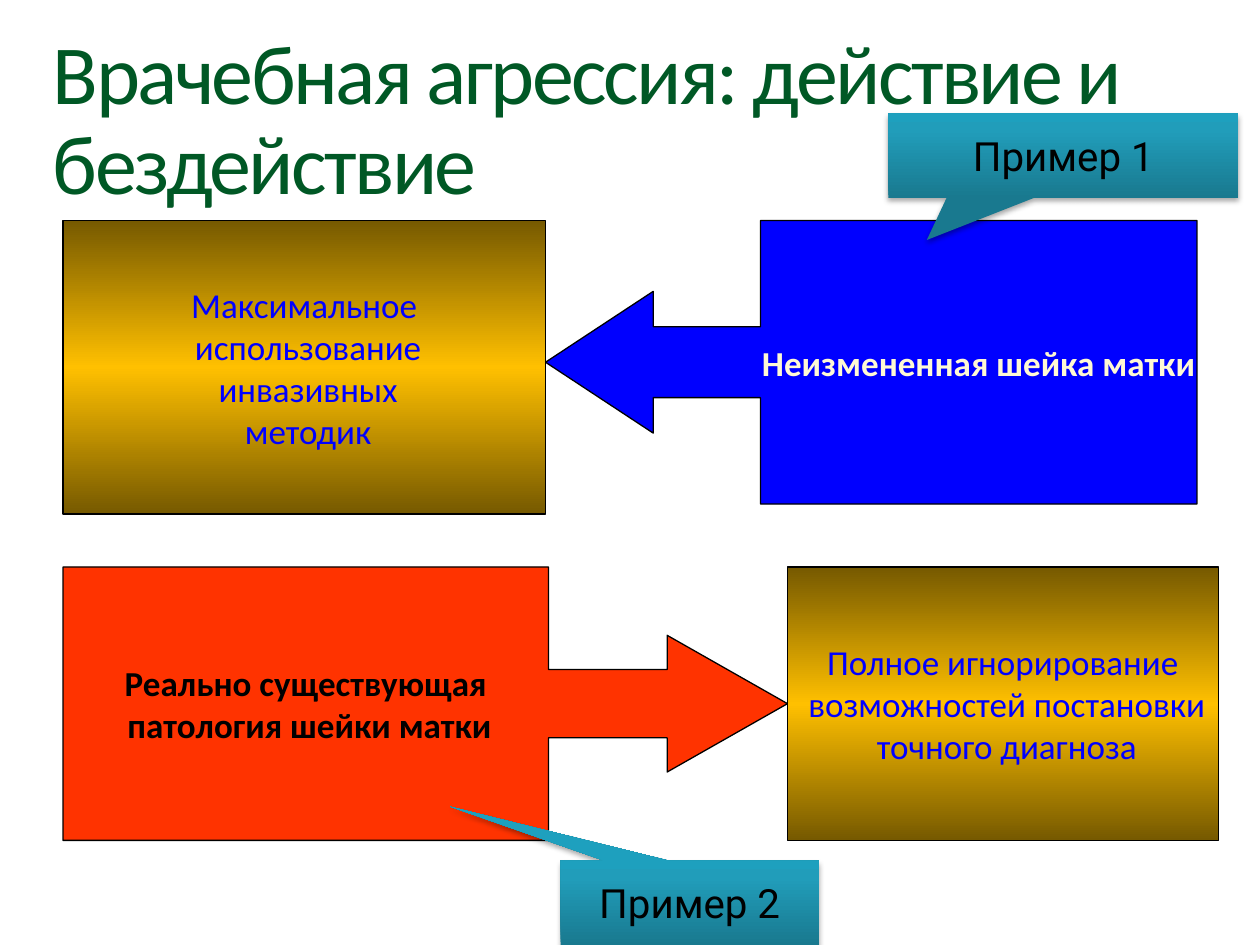
from lxml import etree
from pptx import Presentation
from pptx.dml.color import RGBColor
from pptx.enum.shapes import MSO_SHAPE
from pptx.enum.text import MSO_ANCHOR, MSO_AUTO_SIZE, PP_ALIGN
from pptx.oxml.ns import qn
from pptx.util import Inches, Pt

RECTANGLE = MSO_SHAPE.RECTANGLE
LEFT_ARROW = MSO_SHAPE.LEFT_ARROW_CALLOUT
RIGHT_ARROW = MSO_SHAPE.RIGHT_ARROW_CALLOUT
SPEECH = MSO_SHAPE.RECTANGULAR_CALLOUT
LEFT, CENTER = PP_ALIGN.LEFT, PP_ALIGN.CENTER
TOP, MIDDLE = MSO_ANCHOR.TOP, MSO_ANCHOR.MIDDLE
GROW, FIXED = MSO_AUTO_SIZE.SHAPE_TO_FIT_TEXT, MSO_AUTO_SIZE.NONE

GREEN = RGBColor(0x00, 0x58, 0x25)
BLUE = RGBColor(0x00, 0x00, 0xFF)
RED = RGBColor(0xFF, 0x33, 0x00)
CREAM = RGBColor(0xFF, 0xF9, 0xD4)
BLACK = RGBColor(0x00, 0x00, 0x00)
BRONZE = RGBColor(0x76, 0x59, 0x00)
GOLD = RGBColor(0xFF, 0xC0, 0x00)
DARK_TEAL = RGBColor(0x19, 0x79, 0x8F)
TEAL = RGBColor(0x21, 0x9D, 0xBA)
LIGHT_TEAL = RGBColor(0x1E, 0xA0, 0xBE)

# Gradient stops as (percent, colour)
GOLD_STOPS = [(0, BRONZE), (50, GOLD), (100, BRONZE)]
TEAL_STOPS = [(0, DARK_TEAL), (80, TEAL), (100, LIGHT_TEAL)]


def write_text(shape, lines, *, size=20, font="Calibri", color=BLACK, bold=False,
               align=CENTER, anchor=MIDDLE, wrap=False, inset=None,
               line_spacing=None, tracking=None, auto_size=FIXED):
    frame = shape.text_frame
    frame.word_wrap = wrap
    frame.auto_size = auto_size
    frame.vertical_anchor = anchor
    if inset is not None:
        frame.margin_left = frame.margin_right = Inches(inset)
        frame.margin_top = frame.margin_bottom = Inches(inset)
    for index, line in enumerate(lines):
        para = frame.add_paragraph() if index else frame.paragraphs[0]
        para.alignment = align
        if line_spacing:
            para.line_spacing = line_spacing
        span = para.add_run()
        span.text = line
        span.font.size = Pt(size)
        span.font.name = font
        span.font.bold = bold
        span.font.color.rgb = color
        if tracking:
            span.font._element.set("spc", str(round(tracking * 100)))


def fill_gradient(shape, stops, angle):
    """Fill with any number of stops; the angle runs counter-clockwise."""
    shape.fill.gradient()
    shape.fill.gradient_angle = angle
    stop_list = shape._element.spPr.find(f".//{qn('a:gsLst')}")
    for old_stop in list(stop_list):
        stop_list.remove(old_stop)
    for percent, color in stops:
        stop = etree.SubElement(stop_list, qn("a:gs"), pos=str(percent * 1000))
        etree.SubElement(stop, qn("a:srgbClr"), val=str(color))


def add_soft_shadow(shape):
    effects = shape._element.spPr.find(qn("a:effectLst"))
    shadow = etree.SubElement(effects, qn("a:outerShdw"), blurRad=str(Pt(3.1)),
                              dist=str(Pt(1.8)), dir="5400000", rotWithShape="0")
    color = etree.SubElement(shadow, qn("a:srgbClr"), val=str(BLACK))
    etree.SubElement(color, qn("a:alpha"), val="35000")


def add_block(page, kind, place, adjustments=()):
    shape = page.shapes.add_shape(kind, *map(Inches, place))
    shape.shadow.inherit = False
    for index, value in enumerate(adjustments):
        shape.adjustments[index] = value
    return shape


def outline(shape):
    shape.line.color.rgb = BLACK
    shape.line.width = Pt(0.75)


def add_arrow(page, kind, place, adjustments, fill, lines, color):
    shape = add_block(page, kind, place, adjustments)
    shape.fill.solid()
    shape.fill.fore_color.rgb = fill
    outline(shape)
    write_text(shape, lines, color=color, bold=True)


def add_gold_box(page, place, lines):
    shape = add_block(page, RECTANGLE, place)
    fill_gradient(shape, GOLD_STOPS, 270)
    outline(shape)
    write_text(shape, lines, color=BLUE)


def add_example(page, place, pointer, text):
    shape = add_block(page, SPEECH, place, pointer)
    fill_gradient(shape, TEAL_STOPS, 90)
    shape.line.fill.background()
    add_soft_shadow(shape)
    write_text(shape, [text], size=23, font="Roboto", wrap=True)


def add_title(page, text):
    title = page.shapes.title
    title.left, title.top = Inches(0.42), Inches(0.25)
    title.width, title.height = Inches(9.17), Inches(0.73)
    write_text(title, [text], size=48, color=GREEN, align=LEFT, anchor=TOP, wrap=True,
               inset=0, line_spacing=0.9, tracking=-1.5, auto_size=GROW)


def main():
    deck = Presentation()
    deck.slide_width, deck.slide_height = Inches(10), Inches(7.5)
    page = deck.slides.add_slide(deck.slide_layouts[5])
    add_title(page, "Врачебная агрессия: действие и бездействие")

    # Conditions, each pointing to the doctor's response
    add_arrow(page, LEFT_ARROW, (4.33, 1.75, 5.17, 2.25), (0.25, 0.25, 0.38, 0.67),
              BLUE, ["Неизмененная шейка матки"], CREAM)
    add_arrow(page, RIGHT_ARROW, (0.5, 4.5, 5.75, 2.17), (0.25, 0.25, 0.44, 0.67),
              RED, ["Реально существующая", " патология шейки матки"], BLACK)

    # Responses
    add_gold_box(page, (0.5, 1.75, 3.83, 2.33),
                 ["Максимальное", " использование", " инвазивных", " методик"])
    add_gold_box(page, (6.25, 4.5, 3.42, 2.17),
                 ["Полное игнорирование", " возможностей постановки", " точного диагноза"])

    # Example callouts
    add_example(page, (7.05, 0.9, 2.78, 0.67), (-0.39, 1), "Пример 1")
    add_example(page, (4.45, 6.83, 2.05, 0.67), (-0.93, -1.14), "Пример 2")

    deck.save("out.pptx")


if __name__ == "__main__":
    main()
